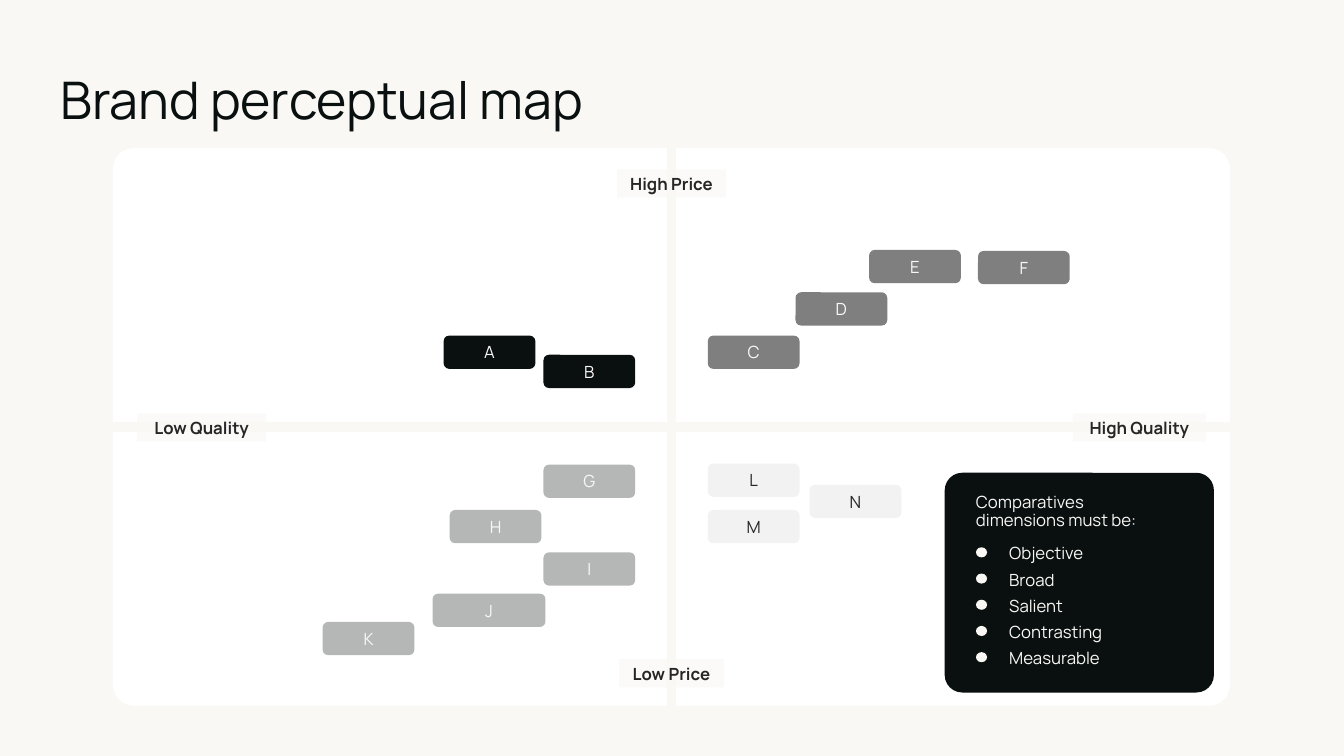
from lxml import etree
from pptx import Presentation
from pptx.dml.color import RGBColor
from pptx.enum.shapes import MSO_CONNECTOR, MSO_SHAPE as Shape
from pptx.enum.text import MSO_ANCHOR as Anchor, PP_ALIGN as Align
from pptx.oxml.ns import qn
from pptx.util import Inches, Pt

FONT = "Manrope"
CREAM = RGBColor(0xF9, 0xF8, 0xF5)
WHITE = RGBColor(0xFF, 0xFF, 0xFF)
INK = RGBColor(0x09, 0x10, 0x0F)
CHARCOAL = RGBColor(0x26, 0x26, 0x26)
GREY = RGBColor(0x7F, 0x7F, 0x7F)
SILVER = RGBColor(0xB5, 0xB7, 0xB7)
MIST = RGBColor(0xF2, 0xF2, 0xF2)

TITLE_BOX = (0.6, 0.67, 12.3, 0.68)
MAP_BOX = (1.12, 1.47, 11.08, 5.53)
CRITERIA_BOX = (9.37, 4.69, 2.67, 2.18)

# Axis end: left, top, width, relative to the map
AXIS_ENDS = {
    "Low Quality": (0.24, 2.63, 1.28),
    "High Quality": (9.52, 2.63, 1.32),
    "High Price": (5.0, 0.21, 1.08),
    "Low Price": (5.02, 5.07, 1.04),
}
# Cluster fill, text colour and its brands: left, top, relative to the map
CLUSTERS = [
    (INK, CREAM, {"A": (3.28, 1.86), "B": (4.27, 2.05)}),
    (GREY, CREAM, {"C": (5.9, 1.86), "D": (6.77, 1.43),
                   "E": (7.5, 1.01), "F": (8.58, 1.02)}),
    (SILVER, CREAM, {"G": (4.27, 3.14), "H": (3.34, 3.59), "I": (4.27, 4.01),
                     "J": (3.17, 4.42), "K": (2.08, 4.7)}),
    (MIST, CHARCOAL, {"L": (5.9, 3.13), "M": (5.9, 3.59), "N": (6.91, 3.34)}),
]
BRAND_WIDTH, WIDE_BRANDS = 0.91, {"J": 1.12}
CRITERIA = ["Objective", "Broad", "Salient", "Contrasting", "Measurable"]


def write(holder, text, size=12, color=CREAM, bold=False, align=Align.LEFT,
          anchor=Anchor.TOP, inset=0, spacing=1.0):
    frame = holder.text_frame
    frame.word_wrap = True
    frame.vertical_anchor = anchor
    frame.margin_left = frame.margin_right = Inches(inset)
    frame.margin_top = frame.margin_bottom = Inches(inset)
    paragraph = frame.paragraphs[0]
    paragraph.alignment = align
    paragraph.line_spacing = spacing
    run = paragraph.add_run()
    run.text = text
    run.font.name, run.font.size = FONT, Pt(size)
    run.font.bold, run.font.color.rgb = bold, color


def add_text(slide, box, text, **style):
    write(slide.shapes.add_textbox(*map(Inches, box)), text, **style)


def add_block(slide, kind, box, fill, corner=None, opacity=None):
    block = slide.shapes.add_shape(kind, *map(Inches, box))
    block.shadow.inherit = False
    block.line.fill.background()
    block.fill.solid()
    block.fill.fore_color.rgb = fill
    if corner is not None:
        block.adjustments[0] = corner
    if opacity is not None:
        rgb = block.fill._xPr.find(".//" + qn("a:srgbClr"))
        etree.SubElement(rgb, qn("a:alpha")).set("val", str(opacity * 1000))
    return block


def add_axis(slide, panel, start, end):
    """Join two opposite sides of the panel."""
    axis = slide.shapes.add_connector(MSO_CONNECTOR.STRAIGHT, 0, 0, 0, 0)
    axis.begin_connect(panel, start)
    axis.end_connect(panel, end)
    axis.line.color.rgb = CREAM
    axis.line.width = Pt(7)
    etree.SubElement(axis._element.spPr, qn("a:effectLst"))


def add_map(slide, box):
    left, top = box[:2]
    panel = add_block(slide, Shape.ROUNDED_RECTANGLE, box, WHITE, corner=0.037)
    add_axis(slide, panel, 2, 0)
    add_axis(slide, panel, 3, 1)
    for name, (x, y, width) in AXIS_ENDS.items():
        label = add_block(slide, Shape.RECTANGLE, (left + x, top + y, width, 0.28),
                          CREAM, opacity=62)
        write(label, name, color=CHARCOAL, bold=True, align=Align.CENTER,
              anchor=Anchor.MIDDLE, inset=0.04)
    for fill, color, brands in CLUSTERS:
        for name, (x, y) in brands.items():
            width = WIDE_BRANDS.get(name, BRAND_WIDTH)
            brand = add_block(slide, Shape.ROUNDED_RECTANGLE,
                              (left + x, top + y, width, 0.33), fill, corner=0.167)
            write(brand, name, color=color, align=Align.CENTER,
                  anchor=Anchor.MIDDLE, inset=0.05)


def add_criteria(slide, box):
    left, top = box[:2]
    add_block(slide, Shape.ROUNDED_RECTANGLE, box, INK, corner=0.08)
    add_text(slide, (left + 0.31, top + 0.21, 1.87, 0.4),
             "Comparatives dimensions must be:", spacing=0.9)
    for row, criterion in enumerate(CRITERIA):
        y = top + 0.72 + row * 0.26
        add_block(slide, Shape.OVAL, (left + 0.31, y + 0.02, 0.11, 0.1), CREAM)
        add_text(slide, (left + 0.64, y, 1.54, 0.2), criterion, spacing=0.9)


def main():
    deck = Presentation()
    deck.slide_width, deck.slide_height = Inches(13.33), Inches(7.5)
    slide = deck.slides.add_slide(deck.slide_layouts[6])
    slide.background.fill.solid()
    slide.background.fill.fore_color.rgb = CREAM
    add_map(slide, MAP_BOX)
    add_criteria(slide, CRITERIA_BOX)
    add_text(slide, TITLE_BOX, "Brand perceptual map", size=37, color=INK)
    deck.save("out.pptx")


if __name__ == "__main__":
    main()
